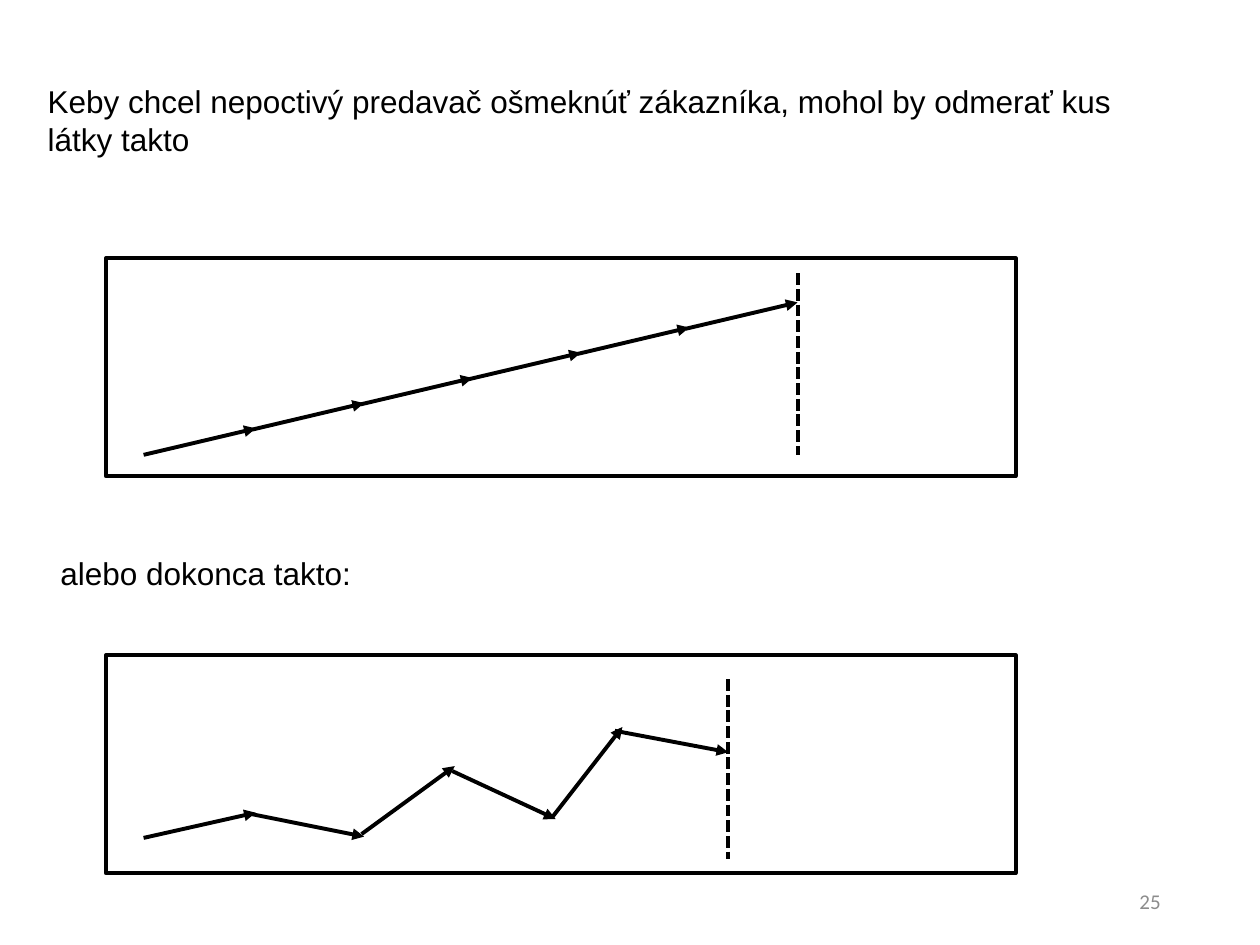
from dataclasses import dataclass

from lxml import etree
from pptx import Presentation
from pptx.dml.color import RGBColor
from pptx.enum import dml, shapes, text
from pptx.oxml import ns
from pptx.util import Inches, Pt


@dataclass(frozen=True)
class Theme:
    ink: RGBColor = RGBColor(0x00, 0x00, 0x00)
    muted: RGBColor = RGBColor(0x8C, 0x8C, 0x8C)
    body_font: str = "Arial"
    number_font: str = "Calibri"
    body_size: int = 18
    number_size: int = 12
    line_width: float = 2.25


@dataclass(frozen=True)
class Label:
    content: str
    left: float
    top: float
    width: float
    height: float


@dataclass(frozen=True)
class Segment:
    x1: float
    y1: float
    x2: float
    y2: float


@dataclass(frozen=True)
class Cloth:
    """A piece of cloth, the yardstick steps laid on it and the cut line."""
    top: float
    steps: list[Segment]
    cut: Segment


THEME = Theme()
CLOTH_LEFT, CLOTH_WIDTH, CLOTH_HEIGHT = 0.84, 7.22, 1.73

LABELS = [
    Label("Keby chcel nepoctivý predavač ošmeknúť zákazníka, "
          "mohol by odmerať kus látky takto", 0.28, 0.6, 8.98, 0.71),
    Label("alebo dokonca takto:", 0.38, 4.35, 8.68, 0.4),
]
PAGE_NUMBER = Label("25", 7.06, 6.95, 2.25, 0.4)

# Six equal steps along one slanted line
STEP_COUNT, STEP_X, STEP_Y = 6, 0.86, -0.2
SLANTED = [
    Segment(1.14 + i * STEP_X, 3.61 + i * STEP_Y,
            2.03 + i * STEP_X, 3.4 + i * STEP_Y)
    for i in range(STEP_COUNT)
]
ZIGZAG = [
    Segment(1.14, 6.65, 2.03, 6.45),
    Segment(1.99, 6.46, 2.89, 6.64),
    Segment(2.87, 6.62, 3.61, 6.08),
    Segment(3.59, 6.12, 4.41, 6.5),
    Segment(4.38, 6.49, 4.94, 5.77),
    Segment(4.88, 5.8, 5.78, 5.97),
]
CLOTHS = [
    Cloth(2.05, SLANTED, Segment(6.33, 2.17, 6.33, 3.61)),
    Cloth(5.2, ZIGZAG, Segment(5.78, 5.39, 5.78, 6.82)),
]


def add_label(slide, label: Label, font: str, size: int, color: RGBColor,
              align=text.PP_ALIGN.LEFT, anchor=text.MSO_ANCHOR.TOP) -> None:
    box = slide.shapes.add_textbox(Inches(label.left), Inches(label.top),
                                   Inches(label.width), Inches(label.height))
    frame = box.text_frame
    frame.word_wrap = True
    frame.vertical_anchor = anchor
    frame.text = label.content
    paragraph = frame.paragraphs[0]
    paragraph.alignment = align
    run_font = paragraph.runs[0].font
    run_font.name = font
    run_font.size = Pt(size)
    run_font.color.rgb = color


def style_line(line) -> None:
    line.color.rgb = THEME.ink
    line.width = Pt(THEME.line_width)


def add_line(slide, segment: Segment, arrow: bool = False) -> None:
    connector = slide.shapes.add_connector(
        shapes.MSO_CONNECTOR.STRAIGHT,
        Inches(segment.x1), Inches(segment.y1),
        Inches(segment.x2), Inches(segment.y2))
    style_line(connector.line)
    if arrow:
        outline = connector.line._get_or_add_ln()
        etree.SubElement(outline, ns.qn("a:tailEnd"), type="triangle")
    else:
        connector.line.dash_style = dml.MSO_LINE.SQUARE_DOT
    etree.SubElement(connector._element.spPr, ns.qn("a:effectLst"))


def add_cloth(slide, cloth: Cloth) -> None:
    rectangle = slide.shapes.add_shape(
        shapes.MSO_SHAPE.RECTANGLE, Inches(CLOTH_LEFT), Inches(cloth.top),
        Inches(CLOTH_WIDTH), Inches(CLOTH_HEIGHT))
    rectangle.shadow.inherit = False
    rectangle.fill.background()
    style_line(rectangle.line)
    for step in cloth.steps:
        add_line(slide, step, arrow=True)
    add_line(slide, cloth.cut)


def main() -> None:
    presentation = Presentation()
    presentation.slide_width = Inches(10)
    presentation.slide_height = Inches(7.5)
    slide = presentation.slides.add_slide(presentation.slide_layouts[6])

    # Each sentence introduces the cloth below it
    for label, cloth in zip(LABELS, CLOTHS):
        add_label(slide, label, THEME.body_font, THEME.body_size, THEME.ink)
        add_cloth(slide, cloth)

    # Page number
    add_label(slide, PAGE_NUMBER, THEME.number_font, THEME.number_size,
              THEME.muted, text.PP_ALIGN.RIGHT, text.MSO_ANCHOR.MIDDLE)

    presentation.save("out.pptx")


if __name__ == "__main__":
    main()
